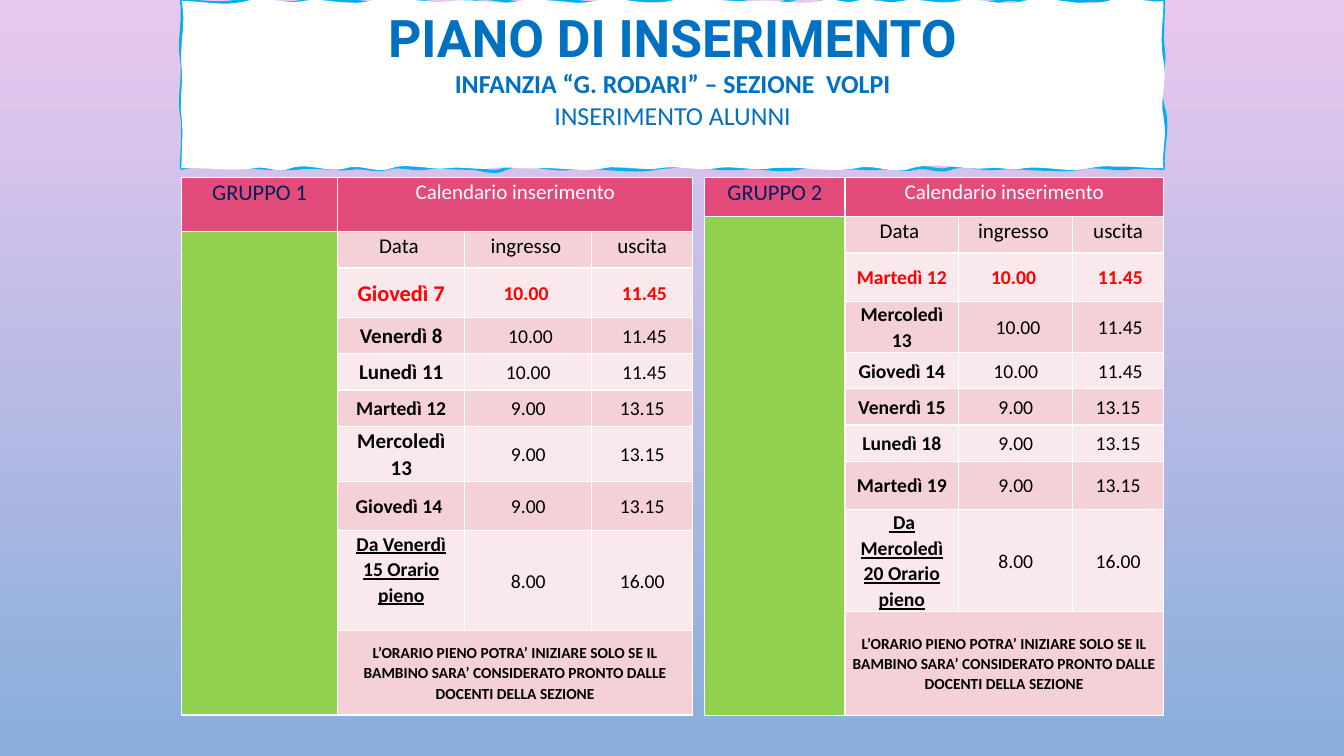
from copy import deepcopy

from lxml.etree import SubElement
from pptx import Presentation
from pptx.dml.color import RGBColor
from pptx.enum.text import MSO_ANCHOR as Anchor, PP_ALIGN as Align
from pptx.oxml.ns import qn
from pptx.util import Cm, Pt

COLORS = {
    "sky_top": "E9C8EF", "sky_bottom": "89AEDB", "frame": "00B0F0", "title": "0070C0",
    "header": "E34B7A", "group": "002060", "side": "92D050", "dark": "F4D0D7",
    "light": "FAE9EC", "alert": "FF0000", "white": "FFFFFF", "black": "000000",
}
TITLE = [
    ("PIANO DI INSERIMENTO", 37, "Roboto", True),
    ("INFANZIA “G. RODARI” – SEZIONE  VOLPI", 18.5, "Calibri", True),
    ("INSERIMENTO ALUNNI", 18.5, "Calibri", False),
]
HEADINGS = ("Data ", "ingresso ", "uscita")
NOTICE = ("L’ORARIO PIENO POTRA’ INIZIARE SOLO SE IL BAMBINO SARA’ CONSIDERATO "
          "PRONTO DALLE DOCENTI DELLA SEZIONE")
GROUPS = [
    {
        "name": "GRUPPO 1", "left": 1.8, "columns": (1.55, 1.26, 1.26, 1),
        "rows": (0.54, 0.36, 0.49, 0.36, 0.36, 0.36, 0.53, 0.49, 0.99, 0.84),
        "space_below": 0.23,
        "days": [
            ("Giovedì 7", 16, "10.00 ", " 11.45"),
            ("Venerdì 8", 15, " 10.00", " 11.45"),
            ("Lunedì 11", 15, "10.00", " 11.45"),
            ("Martedì 12", 14, "9.00", "13.15"),
            ("Mercoledì 13", 15, "9.00", "13.15"),
            ("Giovedì 14 ", 14, "9.00", "13.15"),
            ("Da Venerdì 15 Orario pieno", 14, "8.00", "16.00"),
        ],
    },
    {
        "name": "GRUPPO 2", "left": 6.99, "columns": (1.39, 1.13, 1.13, 0.9),
        "rows": (0.39, 0.36, 0.48, 0.49, 0.36, 0.36, 0.36, 0.48, 0.99, 1.03),
        "space_below": 0,
        "days": [
            ("Martedì 12", 14, "10.00 ", " 11.45"),
            ("Mercoledì 13", 14, " 10.00", " 11.45"),
            ("Giovedì 14", 14, "10.00", " 11.45"),
            ("Venerdì 15", 14, "9.00", "13.15"),
            ("Lunedì 18", 14, "9.00", "13.15"),
            ("Martedì 19", 14, "9.00", "13.15"),
            (" Da Mercoledì 20 Orario pieno", 14, "8.00", "16.00"),
        ],
    },
]
TABLE_TOP = 1.76
LEFT, TOP, RIGHT, BOTTOM = 1.8, 0.01, 11.54, 1.67
STROKE_WAVES = {
    "top": [(2.36, .04), (3.01, .06), (3.36, .02), (3.82, .05), (4.66, .08), (5.31, .07),
            (6.06, .07), (6.41, .02), (7.16, .02), (7.81, .08), (8.46, .02), (8.82, .03),
            (9.37, .01), (9.92, .04), (10.28, .02), (10.73, .02), (RIGHT, .03)],
    "right": [(.51, -.02), (1.07, -.06), (BOTTOM, -.02)],
    "bottom": [(11.19, -.02), (10.73, -.04), (9.89, -.02), (9.43, -.05), (9.08, -.03),
               (8.72, -.01), (8.36, -.01), (7.91, -.04), (7.36, -.02), (6.51, -.05),
               (5.67, -.03), (5.02, -.07), (4.66, 0), (4.21, -.02), (3.85, -.04),
               (3.49, -.02), (2.94, -.03), (LEFT, -.09)],
    "left": [(1.13, .03), (.58, .03), (TOP, .03)],
}
FILL_WAVES = {
    "top": [(2.45, .06), (3.01, .04), (3.66, .06), (4.5, .03), (5.15, .05), (5.9, .06),
            (6.64, .06), (7.49, .02), (8.14, .05), (8.49, .04), (8.95, .04), (9.5, .05),
            (10.15, .07), (10.99, .08), (RIGHT, .03)],
    "right": [(.6, -.04), (1.18, -.04), (BOTTOM, -.02)],
    "bottom": [(10.8, -.05), (10.15, -.03), (9.79, -.02), (9.04, -.07), (8.49, -.05),
               (7.65, -.03), (7.1, -.03), (6.54, -.03), (5.99, -.04), (5.34, -.01),
               (4.89, -.02), (4.43, -.02), (3.88, -.06), (3.43, -.05), (2.88, -.06),
               (2.52, -.03), (LEFT, -.01)],
    "left": [(1.15, .02), (.65, .02), (TOP, .05)],
}
EDGES = [("top", LEFT, TOP), ("right", TOP, RIGHT),
         ("bottom", RIGHT, BOTTOM), ("left", BOTTOM, LEFT)]


def length(inches):
    return Cm(inches * 2.54)


def color(name):
    return RGBColor.from_string(COLORS[name])


def write(para, text, size, tint, font="Calibri", bold=False, underline=False):
    para.alignment = Align.CENTER
    span = para.add_run()
    span.text = text
    span.font.size = Pt(size)
    span.font.name = font
    span.font.bold = bold
    span.font.underline = underline
    span.font.color.rgb = color(tint)


def wavy_curves(waves):
    curves = []
    for edge, start, base in EDGES:
        previous = 0
        for knot, bump in waves[edge]:
            third = (knot - start) / 3
            points = [(start + third, base - previous), (knot - third, base + bump), (knot, base)]
            flat = edge in ("top", "bottom")
            curves.append(points if flat else [(x, y) for y, x in points])
            start, previous = knot, bump
    return curves


def bend(outline, curves):
    for segment, points in zip(outline.findall(qn("a:lnTo")), curves):
        segment.tag = qn("a:cubicBezTo")
        for point in list(segment):
            segment.remove(point)
        for x, y in points:
            SubElement(segment, qn("a:pt"), x=str(length(x - LEFT)), y=str(length(y - TOP)))


def add_title(page):
    stroke, fill = wavy_curves(STROKE_WAVES), wavy_curves(FILL_WAVES)
    builder = page.shapes.build_freeform(length(LEFT), length(TOP))
    for curves in (stroke, fill):
        builder.move_to(length(LEFT), length(TOP))
        knots = [(length(x), length(y)) for *_, (x, y) in curves]
        builder.add_line_segments(knots, close=True)
    box = builder.convert_to_shape()
    box.shadow.inherit = False
    box.fill.solid()
    box.fill.fore_color.rgb = color("white")
    box.line.color.rgb = color("frame")
    box.line.width = Pt(2.25)

    outline = next(box.element.iter(qn("a:path")))
    outline.remove(outline[0])
    interior = deepcopy(outline)
    outline.addnext(interior)
    split = len(stroke) + 2
    for part in list(outline)[split:]:
        outline.remove(part)
    for part in list(interior)[:split]:
        interior.remove(part)
    outline.set("fill", "none")
    interior.set("stroke", "0")
    bend(outline, stroke)
    bend(interior, fill)

    frame = box.text_frame
    frame.word_wrap = True
    frame.vertical_anchor = Anchor.TOP
    for index, (text, size, font, bold) in enumerate(TITLE):
        para = frame.add_paragraph() if index else frame.paragraphs[0]
        write(para, text, size, "title", font, bold)


def style_cell(cell, fill):
    cell.margin_left = cell.margin_right = length(0.07)
    cell.margin_top = cell.margin_bottom = 0
    properties = cell._tc.get_or_add_tcPr()
    for side in "LRTB":
        border = SubElement(properties, qn("a:ln" + side), w=str(Pt(1)))
        paint = SubElement(border, qn("a:solidFill"))
        SubElement(paint, qn("a:srgbClr"), val=COLORS["white"])
    cell.fill.solid()
    cell.fill.fore_color.rgb = color(fill)


def fill_cell(cell, text, size, tint="black", middle=True, **style):
    cell.vertical_anchor = Anchor.MIDDLE if middle else Anchor.TOP
    para = cell.text_frame.paragraphs[0]
    para.line_spacing = 1.07
    write(para, text, size, tint, **style)


def add_group(page, group):
    columns, rows, days = group["columns"], group["rows"], group["days"]
    table = page.shapes.add_table(
        len(rows), len(columns), length(group["left"]), length(TABLE_TOP),
        length(sum(columns)), length(sum(rows))).table
    table.first_row = table.horz_banding = False
    for column, width in zip(table.columns, columns):
        column.width = length(width)
    for row, height in zip(table.rows, rows):
        row.height = length(height)
    last = len(rows) - 1
    for r in range(len(rows)):
        for c in range(len(columns)):
            body = "side" if c == 0 else "dark" if r % 2 else "light"
            style_cell(table.cell(r, c), body if r else "header")
    table.cell(0, 1).merge(table.cell(0, 3))
    table.cell(1, 0).merge(table.cell(last, 0))
    table.cell(last, 1).merge(table.cell(last, 3))

    fill_cell(table.cell(0, 0), group["name"], 16, "group", middle=False)
    fill_cell(table.cell(0, 1), "Calendario inserimento", 15, "white", middle=False)
    for c, heading in enumerate(HEADINGS, 1):
        fill_cell(table.cell(1, c), heading, 15, middle=False)
    for r, (day, size, *times) in enumerate(days, 2):
        first = r == 2
        tint = "alert" if first else "black"
        fill_cell(table.cell(r, 1), day, size, tint, bold=True, underline=r == last - 1)
        for c, time in enumerate(times, 2):
            fill_cell(table.cell(r, c), time, 14, tint, bold=first)
    table.cell(last - 1, 1).margin_bottom = length(group["space_below"])
    fill_cell(table.cell(last, 1), NOTICE, 11, bold=True)


def main():
    deck = Presentation()
    deck.slide_width, deck.slide_height = length(13.33), length(7.5)
    page = deck.slides.add_slide(deck.slide_layouts[6])
    backdrop = page.background.fill
    backdrop.gradient()
    backdrop.gradient_angle = 270
    for stop, name in zip(backdrop.gradient_stops, ("sky_top", "sky_bottom")):
        stop.color.rgb = color(name)
    add_group(page, GROUPS[0])
    add_title(page)
    add_group(page, GROUPS[1])
    deck.save("out.pptx")


if __name__ == "__main__":
    main()
